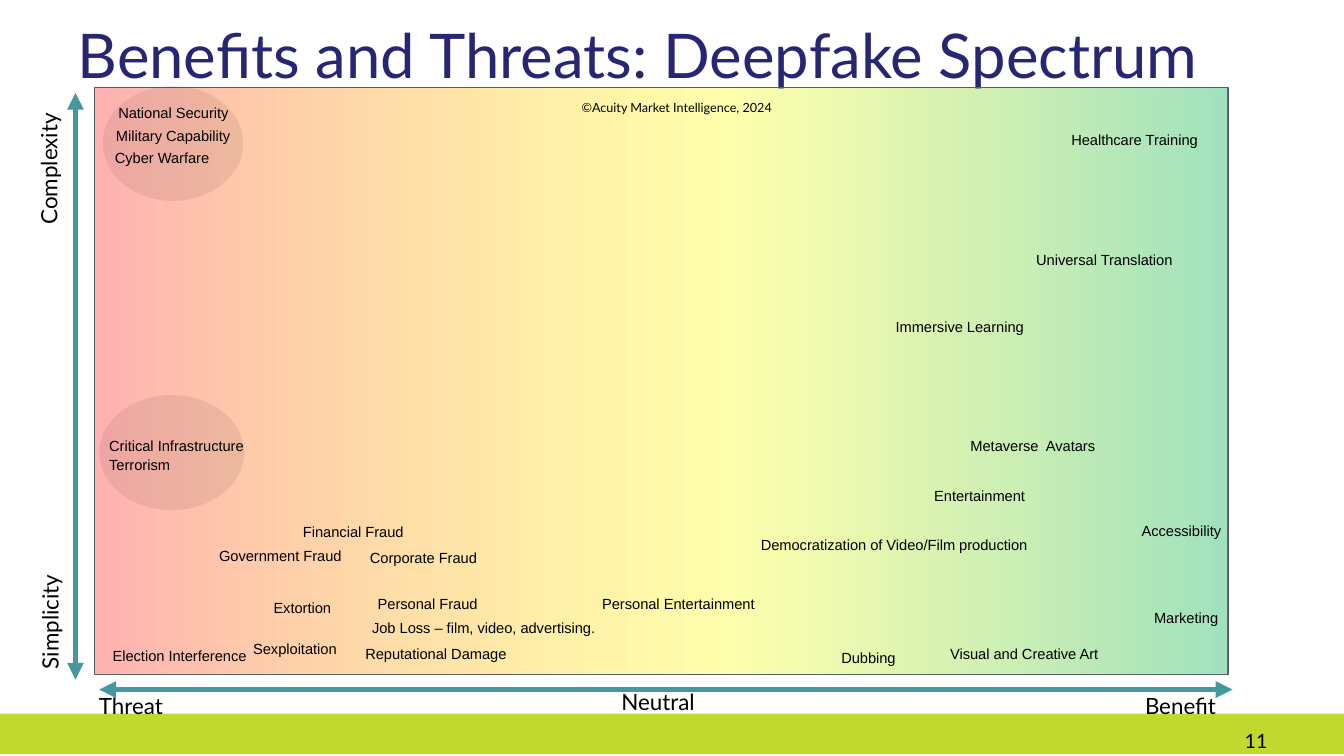
import collections
import lxml.etree
import pptx
import pptx.dml.color
import pptx.enum.shapes
import pptx.enum.text
import pptx.oxml
import pptx.oxml.ns
import pptx.util

RGBColor = pptx.dml.color.RGBColor
Shape = pptx.enum.shapes.MSO_SHAPE
Align = pptx.enum.text.PP_ALIGN
Anchor = pptx.enum.text.MSO_ANCHOR
AutoSize = pptx.enum.text.MSO_AUTO_SIZE
Box = collections.namedtuple("Box", "left top width height")

NAVY = RGBColor(0x26, 0x26, 0x73)
LIME = RGBColor(0xC1, 0xD8, 0x2E)
TEAL = RGBColor(0x45, 0x97, 0xA0)
SLATE = RGBColor(0x52, 0x62, 0x63)
BLACK = RGBColor(0, 0, 0)
RED = RGBColor(0xFF, 0x70, 0x71)
YELLOW = RGBColor(0xFF, 0xFF, 0)
GREEN = RGBColor(0, 0xB0, 0x50)

SPECTRUM = [(0, RED, 54), (56, YELLOW, 32), (100, GREEN, 37)]
TOPIC_HEIGHT = 4.8
TOPICS = [
    ("Immersive Learning", 69.8, 38.3, 19.6),
    ("Marketing", 92.6, 88, 8.1),
    ("Dubbing", 65, 94.8, 9.5),
    ("Universal Translation", 82.2, 27, 18.2),
    ("Healthcare Training", 85.3, 6.5, 14.6),
    ("Extortion", 14.9, 86.3, 9.6),
    ("Election Interference", 0.7, 94.5, 14.1),
    ("Critical Infrastructure", 0.4, 58.6, 15),
    ("National Security", 1.2, 1.9, 14.5),
    ("Cyber Warfare", 0.9, 9.5, 15),
    ("Terrorism", 0.4, 61.9, 8.1),
    ("Military Capability", 1, 5.8, 15),
    ("Corporate Fraud", 23.4, 77.7, 12.5),
    ("Personal Fraud", 24.1, 85.6, 11),
    ("Government Fraud", 10.1, 77.5, 14.8),
    ("Reputational Damage", 23, 94.2, 15),
    ("Visual and Creative Art", 74.6, 94.2, 16),
    ("Entertainment", 73.2, 67.2, 12.8),
    ("Accessibility", 91.5, 73.2, 10),
    ("Metaverse  Avatars", 76.4, 58.6, 19.6),
    ("Democratization of Video/Film production", 57.9, 75.6, 28.1),
    ("Job Loss – film, video, advertising.", 23.6, 89.7, 27.4),
    ("Sexploitation", 13.1, 93.3, 12.5),
    ("Personal Entertainment", 43.9, 85.6, 18.6),
    ("Financial Fraud", 17.5, 73.4, 14.8),
]
CLUSTERS = [(0.7, -0.3, 12.4, 19.6), (0.4, 52.4, 12.8, 19.6)]
AXES = [((0.4, 102.6), (100.4, 102.6)), ((-1.7, 100.9), (-1.7, 0.9))]
AXIS_LABELS = [
    ("Complexity", -11.6, 7.2, 270),
    ("Simplicity", -11.5, 83, 270),
    ("Threat", -0.5, 102.2, 0),
    ("Benefit", 91.8, 102.2, 0),
    ("Neutral", 45.6, 101.5, 0),
]


def share(box, left, top, width=0, height=0):
    return Box(
        int(box.left + box.width * left / 100),
        int(box.top + box.height * top / 100),
        int(box.width * width / 100),
        int(box.height * height / 100),
    )


def write(frame, text, size, font="Lato", color=BLACK, align=Align.LEFT):
    frame.word_wrap = True
    para = frame.paragraphs[0]
    para.alignment = align
    span = para.add_run()
    span.text = text
    span.font.size = pptx.util.Pt(size)
    span.font.name = font
    span.font.color.rgb = color


def add_text(page, box, text, size, rotation=0, **style):
    label = page.shapes.add_textbox(*box)
    label.rotation = rotation
    write(label.text_frame, text, size, **style)
    label.text_frame.auto_size = AutoSize.SHAPE_TO_FIT_TEXT


def add_block(page, kind, box, color):
    block = page.shapes.add_shape(kind, *box)
    block.shadow.inherit = False
    block.fill.solid()
    block.fill.fore_color.rgb = color
    block.line.fill.background()
    return block


def set_alpha(color_element, percent):
    alpha = lxml.etree.SubElement(color_element, pptx.oxml.ns.qn("a:alpha"))
    alpha.set("val", str(percent * 1000))


def set_spectrum(block):
    block.fill.gradient()
    block.fill.gradient_angle = 0
    stops = block.fill._fill._gradFill.find(pptx.oxml.ns.qn("a:gsLst"))
    for stop in list(stops):
        stops.remove(stop)
    for position, color, opacity in SPECTRUM:
        stop = lxml.etree.SubElement(stops, pptx.oxml.ns.qn("a:gs"))
        stop.set("pos", str(position * 1000))
        tint = lxml.etree.SubElement(stop, pptx.oxml.ns.qn("a:srgbClr"))
        tint.set("val", str(color))
        set_alpha(tint, opacity)


def add_axis(page, box, start, end):
    first, last = share(box, *start), share(box, *end)
    axis = page.shapes.add_connector(
        pptx.enum.shapes.MSO_CONNECTOR.STRAIGHT,
        first.left, first.top, last.left, last.top)
    axis.line.color.rgb = TEAL
    axis.line.width = pptx.util.Pt(4)
    line = axis.line._get_or_add_ln()
    for name in ("a:headEnd", "a:tailEnd"):
        arrow = lxml.etree.SubElement(line, pptx.oxml.ns.qn(name))
        arrow.set("type", "triangle")
    lxml.etree.SubElement(axis._element.spPr, pptx.oxml.ns.qn("a:effectLst"))


def add_title(page, box):
    title = page.shapes.title
    title.left, title.top, title.width, title.height = box
    title.text_frame.vertical_anchor = Anchor.MIDDLE
    title.text_frame.auto_size = AutoSize.NONE
    write(title.text_frame, "Benefits and Threats: Deepfake Spectrum", 44, color=NAVY)


def add_footer(page, box):
    add_block(page, Shape.RECTANGLE, box, LIME)
    add_text(page, share(box, 71.7, 25, 23.35, 77.5), "11", 14, align=Align.RIGHT)


def add_axes(page, box):
    for start, end in AXES:
        add_axis(page, box, start, end)
    for text, left, top, rotation in AXIS_LABELS:
        add_text(page, share(box, left, top, 15.1, 6.4), text, 16, rotation)


def add_plot(page, box):
    plot = add_block(page, Shape.RECTANGLE, box, YELLOW)
    set_spectrum(plot)
    plot.line.color.rgb = SLATE
    plot.line.width = pptx.util.Pt(1)
    add_axes(page, box)
    for text, left, top, width in TOPICS:
        add_text(page, share(box, left, top, width, TOPIC_HEIGHT), text, 10.5, font="Arial")
    add_text(page, share(box, 40.6, 1.2, 21.5, 4.3),
             "©Acuity Market Intelligence, 2024", 9, align=Align.CENTER)
    for cluster in CLUSTERS:
        ellipse = add_block(page, Shape.OVAL, share(box, *cluster), BLACK)
        tint = ellipse._element.spPr.find(".//" + pptx.oxml.ns.qn("a:srgbClr"))
        set_alpha(tint, 7)


def main():
    deck = pptx.Presentation()
    deck.slide_width = pptx.util.Inches(13.33)
    deck.slide_height = pptx.util.Inches(7.5)
    page = deck.slides.add_slide(deck.slide_layouts[5])
    whole = Box(0, 0, deck.slide_width, deck.slide_height)
    add_title(page, share(whole, 5.03, 0, 90, 14.27))
    add_footer(page, share(whole, 0, 94.4, 100, 5.33))
    add_plot(page, share(whole, 7.05, 11.6, 84.32, 77.6))
    deck.save("out.pptx")


if __name__ == "__main__":
    main()
